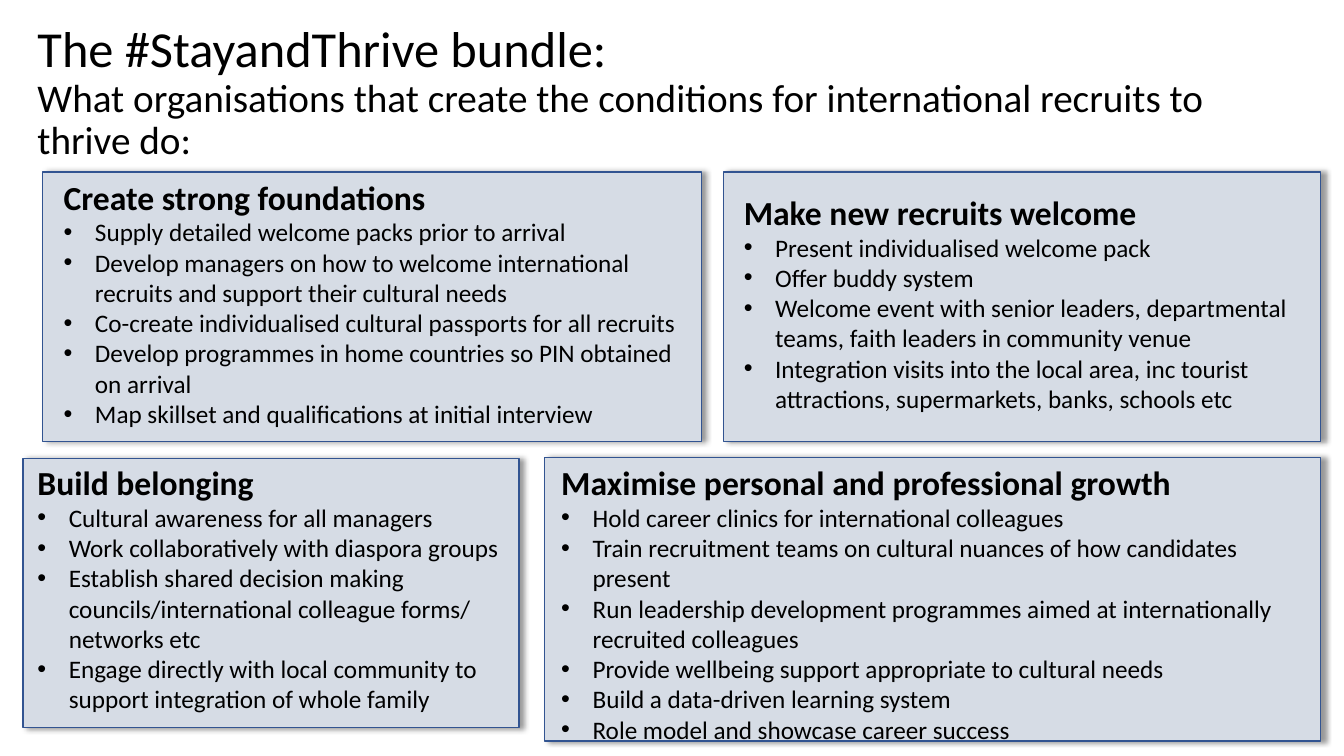
"""Build the Stay and Thrive bundle slide with four shaded list cards."""
import pptx
import pptx.util
import pptx.dml.color
import pptx.enum.shapes
import pptx.enum.text
import pptx.oxml
import pptx.oxml.ns
from lxml import etree

Cm, Pt = pptx.util.Cm, pptx.util.Pt
ENUM = pptx.enum.text
qn = pptx.oxml.ns.qn

HEAD = "The #StayandThrive bundle:"
SUB = "What organisations that create the conditions for international recruits to thrive do:"
HEAD_AT = (0.69, 0.76, 31.5, 3.18)

CARDS = [
    {"name": "Create strong foundations",
     "card": (1.07, 4.34, 16.61, 6.78), "text": (1.35, 4.32, 16.61, 7.44),
     "list": ["Supply detailed welcome packs prior to arrival",
              "Develop managers on how to welcome international recruits and support their cultural needs",
              "Co-create individualised cultural passports for all recruits",
              "Develop programmes in home countries so PIN obtained on arrival",
              "Map skillset and qualifications at initial interview"]},
    {"name": "Maximise personal and professional growth",
     "card": (13.72, 11.53, 19.56, 7.14), "text": (13.89, 11.51, 19.56, 8.2),
     "list": ["Hold career clinics for international colleagues",
              "Train recruitment teams on cultural nuances of how candidates present",
              "Run leadership development programmes aimed at internationally recruited colleagues",
              "Provide wellbeing support appropriate to cultural needs",
              "Build a data-driven learning system",
              "Role model and showcase career success"]},
    {"name": "Build belonging",
     "card": (0.58, 11.56, 12.5, 6.78), "text": (0.69, 11.51, 12.4, 7.44),
     "list": ["Cultural awareness for all managers",
              "Work collaboratively with diaspora groups",
              "Establish shared decision making councils/international colleague forms/ networks etc",
              "Engage directly with local community to support integration of whole family"]},
    {"name": "Make new recruits welcome",
     "card": (18.24, 4.34, 15.04, 6.78), "text": (18.49, 4.7, 15.04, 6.68),
     "list": ["Present individualised welcome pack",
              "Offer buddy system",
              "Welcome event with senior leaders, departmental teams, faith leaders in community venue",
              "Integration visits into the local area, inc tourist attractions, supermarkets, banks, schools etc"]},
]

FRAME = {"word_wrap": True, "auto_size": ENUM.MSO_AUTO_SIZE.NONE}
TOP = {**FRAME, "vertical_anchor": ENUM.MSO_ANCHOR.TOP}
MID = {**FRAME, "vertical_anchor": ENUM.MSO_ANCHOR.MIDDLE}
PARA = {"alignment": ENUM.PP_ALIGN.LEFT, "space_before": Pt(0),
        "space_after": Pt(0), "line_spacing": 1.0}
FONT = {"name": "Calibri", "bold": False}
SHADE = (
    '<a:effectLst xmlns:a="http://schemas.openxmlformats.org/drawingml/2006/main">'
    f'<a:outerShdw blurRad="{Pt(4)}" dist="{Pt(3)}" dir="0" algn="l" rotWithShape="0">'
    '<a:srgbClr val="000000"><a:alpha val="40000"/></a:srgbClr>'
    '</a:outerShdw></a:effectLst>')


def color(code):
    return pptx.dml.color.RGBColor.from_string(code)


def apply(item, form):
    for key, value in form.items():
        setattr(item, key, value)


def place(shape, spot):
    apply(shape, dict(zip(("left", "top", "width", "height"), map(Cm, spot))))


def write(para, text, size, **more):
    run = para.add_run()
    run.text = text
    apply(run.font, {**FONT, "size": Pt(size), **more})
    run.font.color.rgb = color("000000")


def indent(para, mark):
    props = para._p.get_or_add_pPr()
    gap = Cm(0.79) if mark else 0
    props.set("marL", str(gap))
    props.set("indent", str(-gap))
    if mark:
        etree.SubElement(props, qn("a:buFont"), typeface="Arial")
        etree.SubElement(props, qn("a:buChar"), char=mark)
    else:
        etree.SubElement(props, qn("a:buNone"))


def add_card(slide, spot):
    card = slide.shapes.add_shape(pptx.enum.shapes.MSO_SHAPE.RECTANGLE, *map(Cm, spot))
    card.fill.solid()
    card.fill.fore_color.rgb = color("D6DCE5")
    card.line.color.rgb = color("325491")
    card.line.width = Pt(1)
    card._element.spPr.append(pptx.oxml.parse_xml(SHADE))


def fill_list(box, name, items):
    frame = box.text_frame
    apply(frame, TOP)
    for num, text in enumerate([name] + items):
        para = frame.add_paragraph() if num else frame.paragraphs[0]
        indent(para, "•" if num else "")
        apply(para, PARA)
        write(para, text, 18 if num else 24, bold=not num)


def fill_title(title):
    place(title, HEAD_AT)
    apply(title.text_frame, MID)
    para = title.text_frame.paragraphs[0]
    apply(para, {**PARA, "line_spacing": 0.9})
    write(para, HEAD, 36)
    para.add_line_break()
    etree.SubElement(para._p.find(qn("a:br")), qn("a:rPr"), sz="3600")
    write(para, SUB, 28)


def main():
    deck = pptx.Presentation()
    apply(deck, {"slide_width": Cm(33.87), "slide_height": Cm(19.05)})
    slide = deck.slides.add_slide(deck.slide_layouts.get_by_name("Comparison"))
    title, *boxes = slide.placeholders
    fill_title(title)
    for box, data in zip(boxes, CARDS):
        add_card(slide, data["card"])
        place(box, data["text"])
        fill_list(box, data["name"], data["list"])
        slide.shapes._spTree.append(box._element)
    deck.save("out.pptx")


if __name__ == "__main__":
    main()
